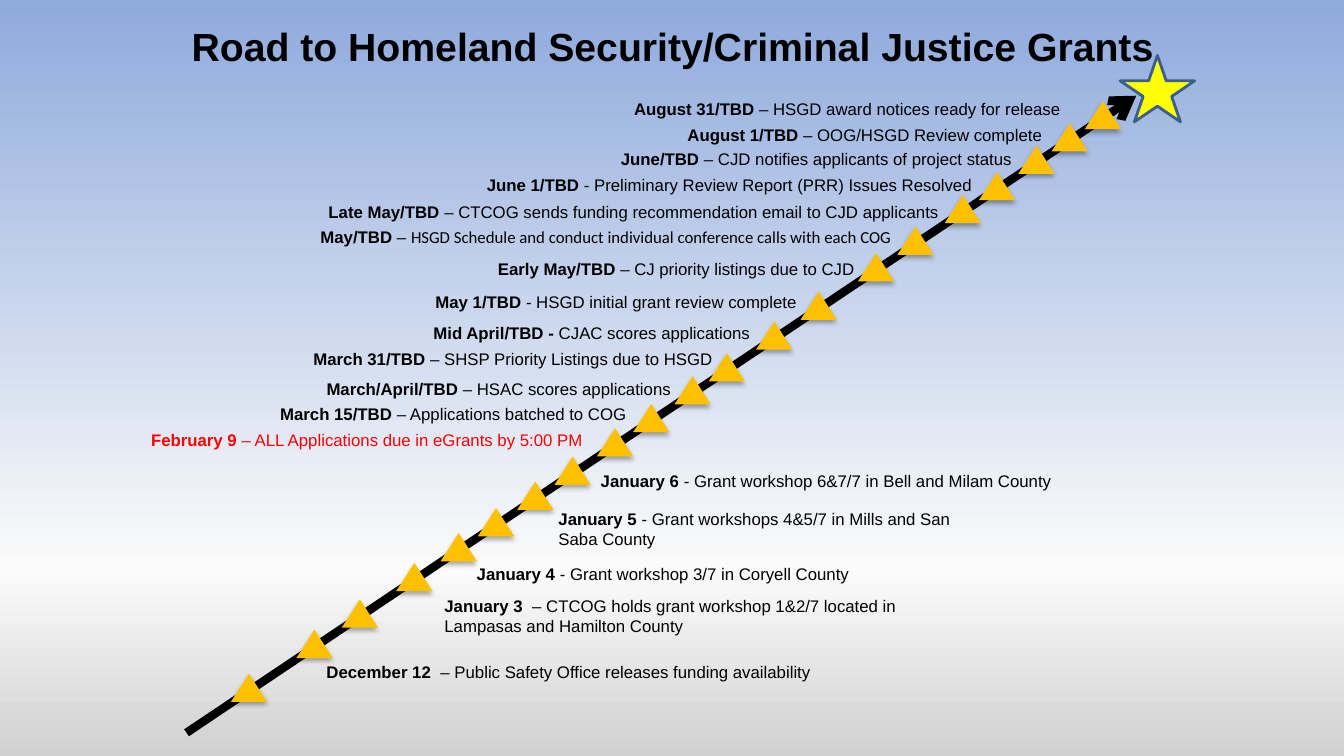
"""Build the grant timeline slide: a rising road with dated milestones."""
from copy import deepcopy
from dataclasses import dataclass

from lxml.etree import SubElement
from pptx import Presentation
from pptx.dml.color import RGBColor
from pptx.enum.shapes import MSO_CONNECTOR, MSO_SHAPE
from pptx.enum.text import MSO_ANCHOR, MSO_AUTO_SIZE, PP_ALIGN
from pptx.oxml.ns import qn
from pptx.util import Inches, Pt


@dataclass(frozen=True)
class Theme:
    ink: str = "000000"
    deadline: str = "FF0000"
    marker: str = "FFC000"
    star: str = "FFFF00"
    star_edge: str = "3A5F8C"
    sky: tuple = ((0, "8FAADC"), (0.75, "FBFBFB"), (1, "D1D1D1"))
    font: str = "Arial"
    alternate_font: str = "Calibri"
    title_size: int = 28
    label_size: int = 12


theme = Theme()


def write(paragraph, text, font=theme.font, size=theme.label_size, color=theme.ink, bold=False):
    run = paragraph.add_run()
    run.text = text
    run.font.name = font
    run.font.size = Pt(size)
    run.font.bold = bold
    run.font.color.rgb = RGBColor.from_string(color)


presentation = Presentation()
presentation.slide_width = Inches(13.33)
presentation.slide_height = Inches(7.5)
slide = presentation.slides.add_slide(presentation.slide_layouts[5])

sky = slide.background.fill
sky.gradient()
sky.gradient_angle = 270
stop_list = slide.element.find(".//" + qn("a:gsLst"))
stop_list.append(deepcopy(stop_list[-1]))
for stop, (position, color) in zip(sky.gradient_stops, theme.sky):
    stop.position = position
    stop.color.rgb = RGBColor.from_string(color)

title = slide.shapes.title
title.left, title.top = Inches(0.67), Inches(0.08)
title.width, title.height = Inches(12), Inches(0.75)
title.text_frame.auto_size = MSO_AUTO_SIZE.NONE
title.text_frame.vertical_anchor = MSO_ANCHOR.MIDDLE
heading = title.text_frame.paragraphs[0]
heading.alignment = PP_ALIGN.CENTER
write(heading, "Road to Homeland Security/Criminal Justice Grants", size=theme.title_size, bold=True)

start_x, start_y, end_x, end_y = 1.85, 7.27, 11.27, 0.95
road = slide.shapes.add_connector(
    MSO_CONNECTOR.STRAIGHT, Inches(start_x), Inches(start_y), Inches(end_x), Inches(end_y)
)
road.line.width = Pt(6)
road.line.color.rgb = RGBColor.from_string(theme.ink)
SubElement(road.line._get_or_add_ln(), qn("a:tailEnd"), type="arrow")
SubElement(road._element.spPr, qn("a:effectLst"))

marker_width, marker_height, marker_rise = 0.36, 0.28, 0.17
marker_lefts = (
    2.29, 2.94, 3.39, 3.93, 4.37, 4.74, 5.13, 5.5, 5.92, 6.28, 6.69,
    7.03, 7.5, 7.94, 8.51, 8.9, 9.37, 9.71, 10.1, 10.43, 10.76,
)
slope = (end_y - start_y) / (end_x - start_x)
for left in marker_lefts:
    road_y = start_y + slope * (left + marker_width / 2 - start_x)
    marker = slide.shapes.add_shape(
        MSO_SHAPE.ISOSCELES_TRIANGLE,
        Inches(left), Inches(road_y - marker_rise), Inches(marker_width), Inches(marker_height),
    )
    marker.fill.solid()
    marker.fill.fore_color.rgb = RGBColor.from_string(theme.marker)
    marker.line.fill.background()
    marker.shadow.inherit = False
    shadow = SubElement(
        marker._element.spPr.find(qn("a:effectLst")), qn("a:outerShdw"),
        blurRad=str(Pt(3.5)), dist=str(Pt(2.2)), dir="5400000", rotWithShape="0",
    )
    shadow_color = SubElement(shadow, qn("a:srgbClr"), val=theme.ink)
    SubElement(shadow_color, qn("a:alpha"), val="32000")

goal = slide.shapes.add_shape(
    MSO_SHAPE.STAR_5_POINT, Inches(11.11), Inches(0.55), Inches(0.74), Inches(0.66)
)
goal.shadow.inherit = False
goal.fill.solid()
goal.fill.fore_color.rgb = RGBColor.from_string(theme.star)
goal.line.color.rgb = RGBColor.from_string(theme.star_edge)
goal.line.width = Pt(2)

milestones = (
    (6.19, 0.93, 4.47, "August 31/TBD ", "– ", "HSGD award notices ready for release"),
    (6.72, 1.19, 4.97, "August 1/TBD ", "– ", "OOG/HSGD Review complete"),
    (6.06, 1.43, 4.16, "June/TBD ", "– ", "CJD notifies applicants of project status"),
    (4.73, 1.68, 5.24, "June 1/TBD ", "- ", "Preliminary Review Report (PRR) Issues Resolved"),
    (3.16, 1.95, 6.44, "Late May/TBD ", "– ", "CTCOG sends funding recommendation email to CJD applicants"),
    (3.08, 2.2, 6.9, "May/TBD ", "– ", "HSGD Schedule and conduct individual conference calls with each COG"),
    (4.84, 2.52, 3.82, "Early May/TBD ", "– ", "CJ priority listings due to CJD"),
    (4.22, 2.85, 3.91, "May 1/TBD ", "- ", "HSGD initial grant review complete"),
    (4.2, 3.15, 3.42, "Mid April/TBD -", " ", "CJAC scores applications"),
    (3.01, 3.41, 4.29, "March 31/TBD ", "– ", "SHSP Priority Listings due to HSGD"),
    (3.14, 3.71, 3.69, "March/April/TBD ", "– ", "HSAC scores applications"),
    (2.68, 3.96, 4.41, "March 15/TBD ", "– ", "Applications batched to COG"),
    (1.4, 4.21, 4.52, "February 9 ", "– ", "ALL Applications due in eGrants by 5:00 PM"),
    (5.86, 4.62, 4.7, "January 6 ", "- ", "Grant workshop 6&7/7 in Bell and Milam County"),
    (5.44, 5, 4.28, "January 5 ", "- ", "Grant workshops 4&5/7 in Mills and San Saba County"),
    (4.63, 5.54, 4.61, "January 4", " - ", "Grant workshop 3/7 in Coryell County"),
    (4.31, 5.86, 4.74, "January 3  ", "– ", "CTCOG holds grant workshop 1&2/7 located in Lampasas and Hamilton County"),
    (3.14, 6.52, 5.53, "December 12  ", "– ", "Public Safety Office releases funding availability"),
)
two_line_dates = ("January 5 ", "January 3  ")
for left, top, width, date, dash, event in milestones:
    height = 0.5 if date in two_line_dates else 0.3
    label = slide.shapes.add_textbox(Inches(left), Inches(top), Inches(width), Inches(height))
    label.text_frame.word_wrap = True
    label.text_frame.auto_size = MSO_AUTO_SIZE.SHAPE_TO_FIT_TEXT
    line = label.text_frame.paragraphs[0]
    color = theme.deadline if date == "February 9 " else theme.ink
    event_font = theme.alternate_font if date == "May/TBD " else theme.font
    write(line, date, color=color, bold=True)
    write(line, dash, color=color)
    write(line, event, color=color, font=event_font)

presentation.save("out.pptx")
